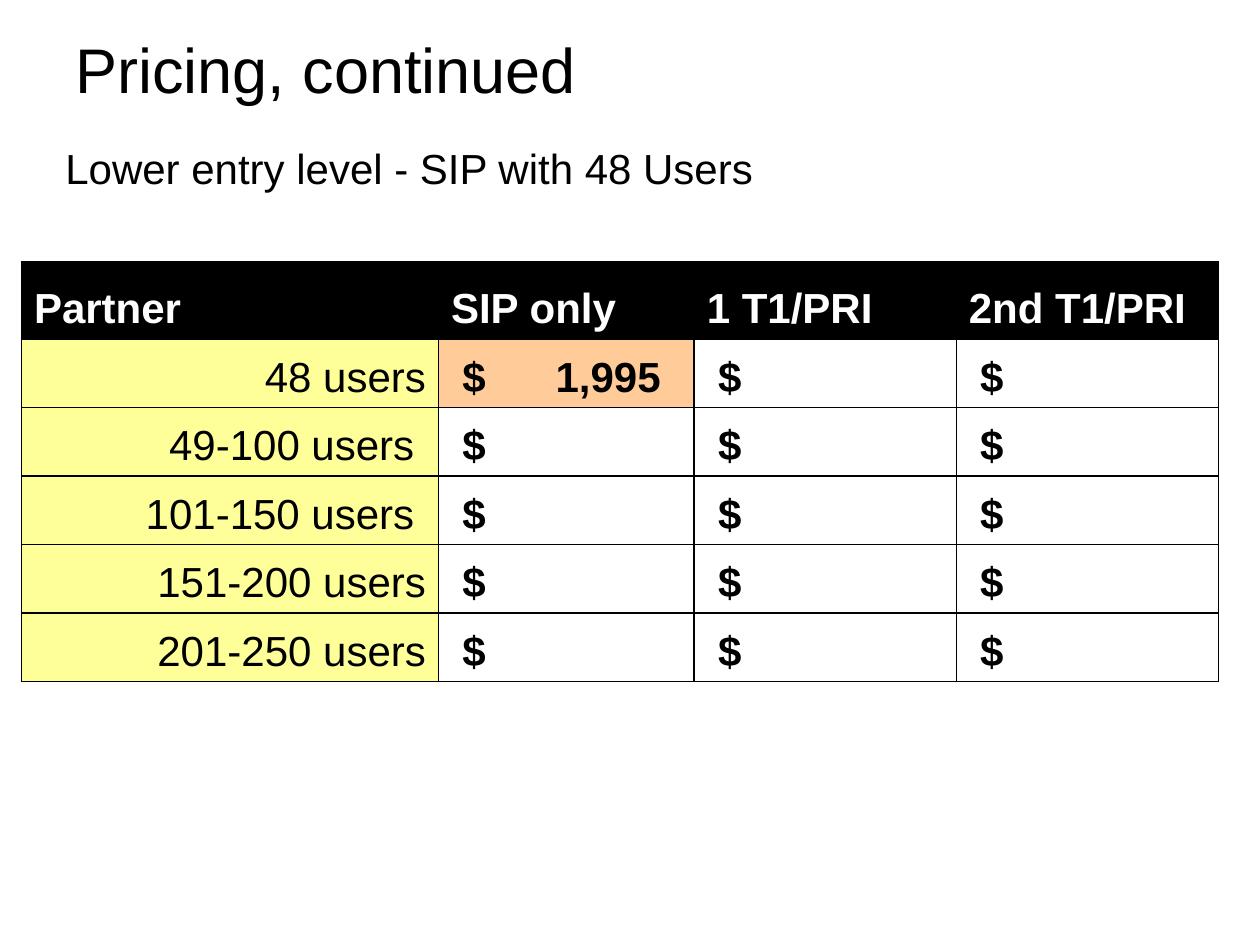
from typing import NamedTuple

from lxml.etree import SubElement
from pptx import Presentation
from pptx.dml.color import RGBColor
from pptx.enum.text import MSO_ANCHOR, PP_ALIGN
from pptx.oxml.ns import qn
from pptx.util import Inches, Pt

COLORS = {"ink": "000000", "paper": "FFFFFF", "label": "FFFF99", "price": "FFCC99"}


class Style(NamedTuple):
    fill: str = ""
    ink: str = "ink"
    bold: bool = True
    align: PP_ALIGN = PP_ALIGN.LEFT
    left: float = 0.1


class Note(NamedTuple):
    text: str
    box: tuple[float, float, float, float]
    size: int
    anchor: MSO_ANCHOR


HEAD = Style(fill="ink", ink="paper")
LABEL = Style(fill="label", bold=False, align=PP_ALIGN.RIGHT)
MONEY = Style(left=0.19)
PRICE = MONEY._replace(fill="price")

NOTES = [
    Note("Pricing, continued", (0.5, 0.17, 8.83, 0.75), 36, MSO_ANCHOR.MIDDLE),
    Note("Lower entry level - SIP with 48 Users", (0.42, 1.08, 8.25, 0.91), 24,
         MSO_ANCHOR.TOP),
]
HEADS = ["Partner", "SIP only", "1 T1/PRI", "2nd T1/PRI"]
USERS = ["48 users", "49-100 users ", "101-150 users ", "151-200 users", "201-250 users"]
WIDTHS = [3.31, 2.03, 2.08, 2.08]
HEIGHTS = [0.61] + [0.544] * len(USERS)


def rgb(name: str) -> RGBColor:
    return RGBColor.from_string(COLORS[name])


def put(par, text: str, size: int, ink: str = "ink", bold: bool = False) -> None:
    run = par.add_run()
    run.text = text
    form = {"name": "Arial", "size": Pt(size), "bold": bold}
    for key, value in form.items():
        setattr(run.font, key, value)
    run.font.color.rgb = rgb(ink)


def add_note(slide, note: Note) -> None:
    frame = slide.shapes.add_textbox(*map(Inches, note.box)).text_frame
    form = {"word_wrap": True, "vertical_anchor": note.anchor}
    for key, value in form.items():
        setattr(frame, key, value)
    put(frame.paragraphs[0], note.text, note.size)


def add_edges(cell) -> None:
    props = cell._tc.get_or_add_tcPr()
    for side in ("lnL", "lnR", "lnT", "lnB"):
        line = SubElement(props, qn(f"a:{side}"), w=str(Pt(1)))
        fill = SubElement(line, qn("a:solidFill"))
        SubElement(fill, qn("a:srgbClr"), val=COLORS["ink"])


def add_tab(par, stop: float) -> None:
    tabs = SubElement(par._p.get_or_add_pPr(), qn("a:tabLst"))
    SubElement(tabs, qn("a:tab"), pos=str(Inches(stop)), algn="l")


def fill_cell(cell, text: str, style: Style) -> None:
    add_edges(cell)
    if style.fill:
        cell.fill.solid()
        cell.fill.fore_color.rgb = rgb(style.fill)
    else:
        cell.fill.background()
    form = {"vertical_anchor": MSO_ANCHOR.BOTTOM, "margin_left": Inches(style.left)}
    for key, value in form.items():
        setattr(cell, key, value)
    par = cell.text_frame.paragraphs[0]
    if "\t" in text:
        add_tab(par, 0.74)
    par.alignment = style.align
    put(par, text, 24, style.ink, style.bold)


def add_prices(slide) -> None:
    # Header row, then one row per user band
    rows = [[(head, HEAD) for head in HEADS]]
    rows += [[(user, LABEL)] + [("$", MONEY)] * 3 for user in USERS]
    rows[1][1] = ("$\t1,995", PRICE)

    box = (0.17, 2.08, sum(WIDTHS), sum(HEIGHTS))
    table = slide.shapes.add_table(len(rows), len(HEADS), *map(Inches, box)).table
    for col, width in zip(table.columns, WIDTHS):
        col.width = Inches(width)
    for row, height, items in zip(table.rows, HEIGHTS, rows):
        row.height = Inches(height)
        for cell, (text, style) in zip(row.cells, items):
            fill_cell(cell, text, style)


def main() -> None:
    deck = Presentation()
    deck.slide_width, deck.slide_height = Inches(10), Inches(7.5)
    slide = deck.slides.add_slide(deck.slide_layouts[6])

    # Title and subtitle
    for note in NOTES:
        add_note(slide, note)
    # Price table
    add_prices(slide)
    deck.save("out.pptx")


if __name__ == "__main__":
    main()
